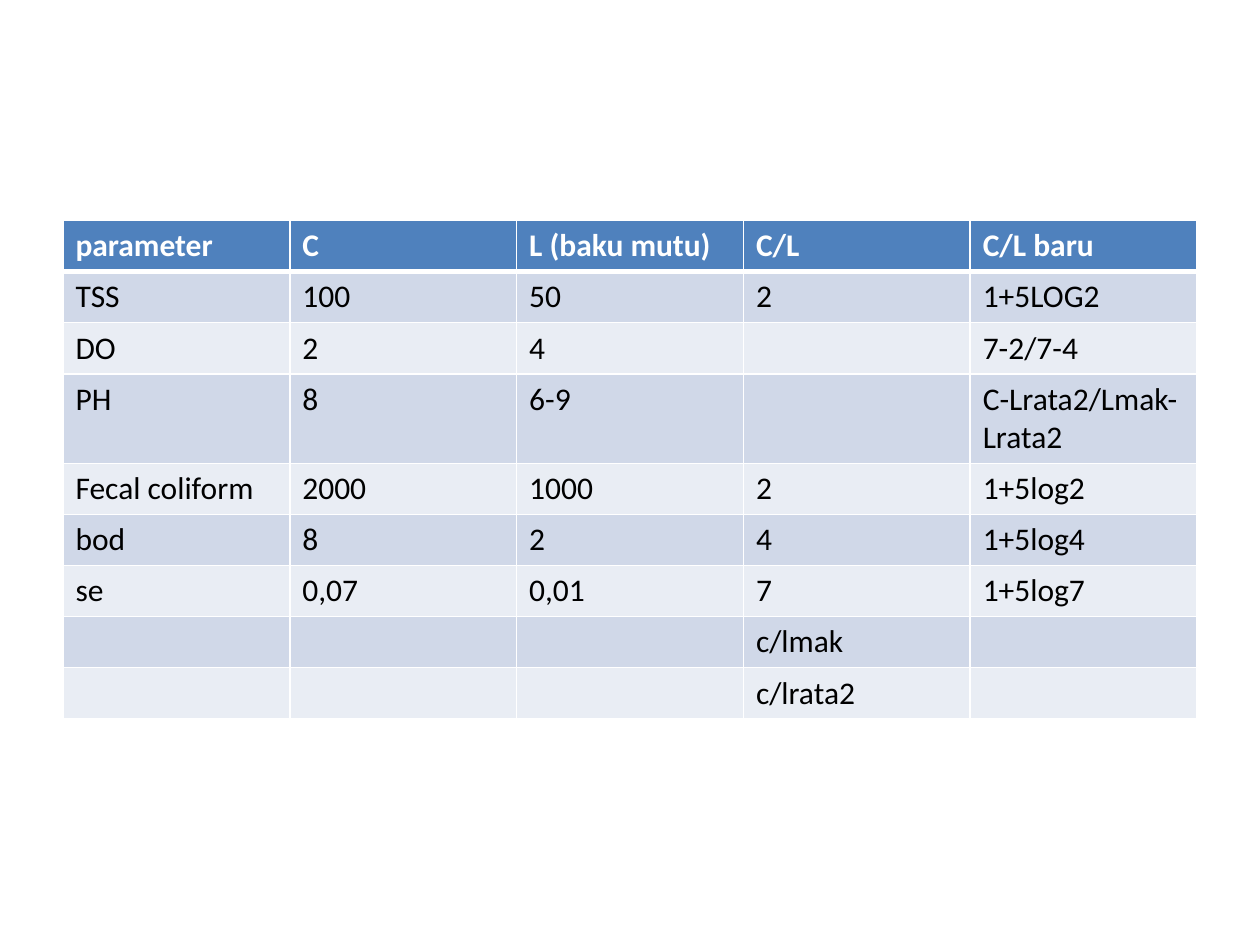
from lxml.etree import SubElement
from pptx import Presentation
from pptx.dml.color import RGBColor
from pptx.oxml.ns import qn
from pptx.util import Pt

HEADINGS = ("parameter", "C", "L (baku mutu)", "C/L", "C/L baru")
MEASUREMENTS = [
    ("TSS", "100", "50", "2", "1+5LOG2"),
    ("DO", "2", "4", "", "7-2/7-4"),
    ("PH", "8", "6-9", "", "C-Lrata2/Lmak-Lrata2"),
    ("Fecal coliform", "2000", "1000", "2", "1+5log2"),
    ("bod", "8", "2", "4", "1+5log4"),
    ("se", "0,07", "0,01", "7", "1+5log7"),
    ("", "", "", "c/lmak", ""),
    ("", "", "", "c/lrata2", ""),
]
COLORS = {
    "header": "4F81BD",
    "odd": "D0D8E8",
    "even": "E9EDF4",
    "border": "FFFFFF",
    "header_text": "FFFFFF",
    "body_text": "000000",
}
FONT = {"name": "Calibri", "size": Pt(18)}
LEFT, TOP, WIDTH, ROW_HEIGHT = 36, 126, 648, 29.2
THIN, THICK = 1, 3


def set_borders(cell, widths):
    """Draw the cell's sides; widths maps L, R, T, B to points."""
    properties = cell._tc.get_or_add_tcPr()
    for position, (side, width) in enumerate(widths.items()):
        line = SubElement(properties, qn(f"a:ln{side}"), w=str(Pt(width)))
        fill = SubElement(line, qn("a:solidFill"))
        SubElement(fill, qn("a:srgbClr"), val=COLORS["border"])
        properties.insert(position, line)  # borders precede the cell fill


def fill_cell(cell, text, row):
    is_header = row == 0
    band = "header" if is_header else "odd" if row % 2 else "even"
    cell.fill.solid()
    cell.fill.fore_color.rgb = RGBColor.from_string(COLORS[band])
    set_borders(cell, {
        "L": THIN,
        "R": THIN,
        "T": THICK if row == 1 else THIN,
        "B": THICK if is_header else THIN,
    })
    cell.text = text
    font = cell.text_frame.paragraphs[0].font
    for attribute, value in {**FONT, "bold": is_header}.items():
        setattr(font, attribute, value)
    text_color = COLORS["header_text" if is_header else "body_text"]
    font.color.rgb = RGBColor.from_string(text_color)


def main():
    presentation = Presentation()
    presentation.slide_width, presentation.slide_height = Pt(720), Pt(540)
    slide = presentation.slides.add_slide(presentation.slide_layouts[6])

    rows = [HEADINGS, *MEASUREMENTS]
    water_quality = slide.shapes.add_table(
        len(rows), len(HEADINGS),
        Pt(LEFT), Pt(TOP), Pt(WIDTH), Pt(ROW_HEIGHT * len(rows)),
    ).table
    for row, texts in enumerate(rows):
        water_quality.rows[row].height = Pt(ROW_HEIGHT)
        for column, text in enumerate(texts):
            fill_cell(water_quality.cell(row, column), text, row)

    presentation.save("out.pptx")


if __name__ == "__main__":
    main()
